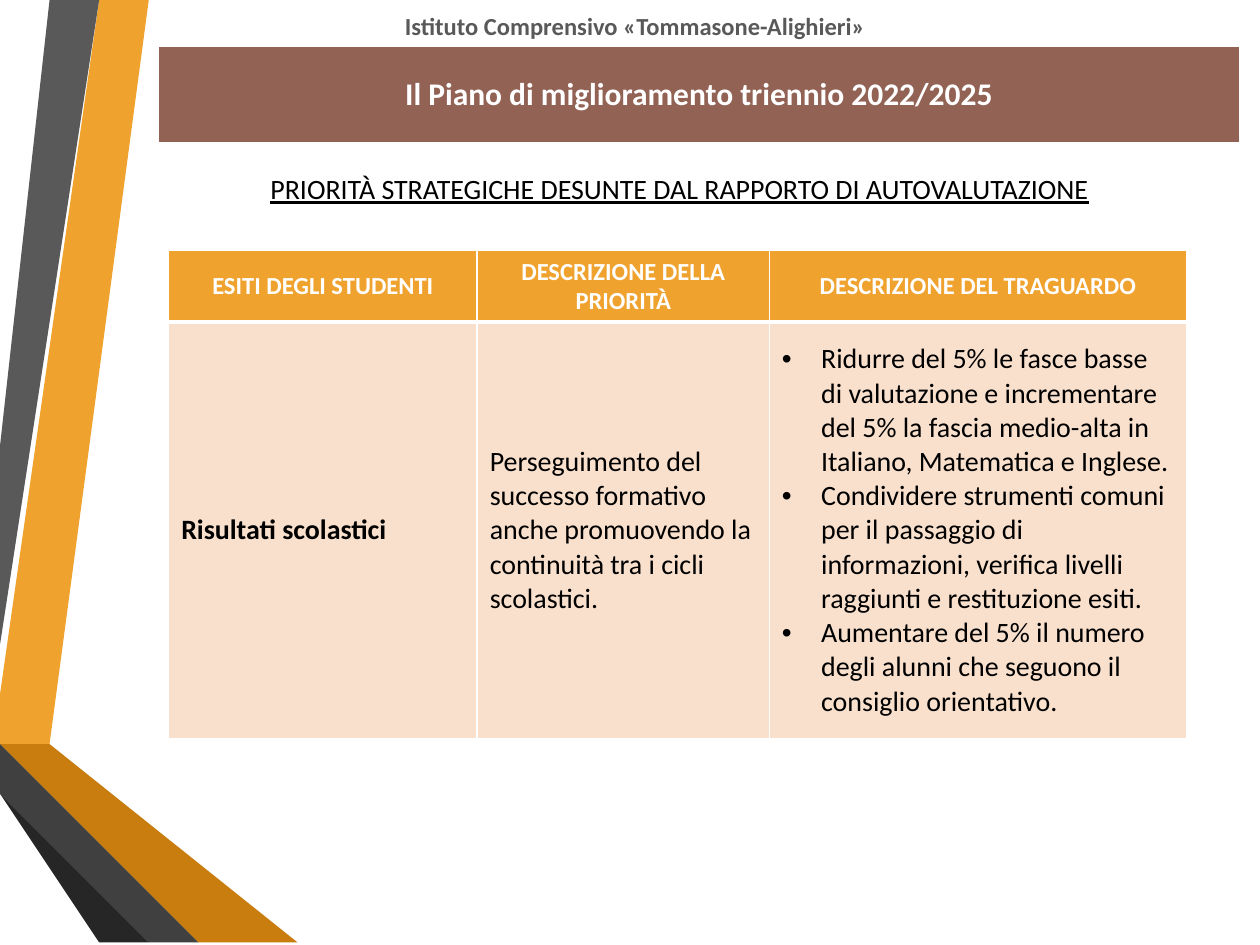
from lxml import etree
from pptx import Presentation
from pptx import util as u
from pptx.dml.color import RGBColor
from pptx.enum import text
from pptx.oxml import ns

COLORS = {
    "orange": "F0A22E", "dark orange": "C87D0E", "brown": "85540A",
    "gray": "595959", "dark gray": "404040", "charcoal": "262626",
    "banner": "926255", "peach": "F9E0CD", "white": "FFFFFF", "black": "000000",
}

# Ribbon colour and corners in centimetres, from back to front
RIBBONS = [
    ("orange", [(0, 13.82), (0, 14.61), (0.56, 14.71), (2.97, 0), (2.26, 0)]),
    ("gray", [(2.11, 0), (1.4, 0), (0, 8.53), (0, 12.85)]),
    ("charcoal", [(0, 15.72), (0, 15.77), (2.36, 19.05), (2.51, 19.05)]),
    ("brown", [(0, 14.71), (0, 14.73), (3.96, 19.05), (4.14, 19.05)]),
    ("dark orange", [(0, 14.71), (4.14, 19.05), (5.92, 19.05), (0.56, 14.71), (0, 14.61)]),
    ("dark gray", [(0, 15.72), (2.51, 19.05), (3.84, 19.05), (0, 14.88)]),
]

HEADERS = ["ESITI DEGLI STUDENTI", "DESCRIZIONE DELLA PRIORITÀ", "DESCRIZIONE DEL TRAGUARDO"]
OUTCOME = "Risultati scolastici"
PRIORITY = ("Perseguimento del successo formativo anche promuovendo la "
            "continuità tra i cicli scolastici.")
TARGETS = [
    "Ridurre del 5% le fasce basse di valutazione e incrementare del 5% "
    "la fascia medio-alta in Italiano, Matematica e Inglese.",
    "Condividere strumenti comuni per il passaggio di informazioni, "
    "verifica livelli raggiunti e restituzione esiti.",
    "Aumentare del 5% il numero degli alunni che seguono il consiglio orientativo.",
]


def rgb(name):
    return RGBColor.from_string(COLORS[name])


def add_ribbon(slide, color, corners):
    builder = slide.shapes.build_freeform(*corners[0], scale=u.Cm(1))
    builder.add_line_segments(corners[1:], close=True)
    shape = builder.convert_to_shape()
    shape.shadow.inherit = False
    shape.fill.solid()
    shape.fill.fore_color.rgb = rgb(color)
    shape.line.fill.background()


def add_bullet(paragraph):
    properties = paragraph._p.get_or_add_pPr()
    properties.set("marL", str(u.Cm(0.79)))
    properties.set("indent", str(-u.Cm(0.79)))
    font = etree.SubElement(properties, ns.qn("a:buFont"))
    font.set("typeface", "Arial")
    etree.SubElement(properties, ns.qn("a:buChar")).set("char", "•")


def write(frame, lines, size, color, bold=False, underline=False, centered=False, bullets=False):
    for index, line in enumerate(lines):
        paragraph = frame.paragraphs[0] if index == 0 else frame.add_paragraph()
        paragraph.text = line
        paragraph.alignment = text.PP_ALIGN.CENTER if centered else text.PP_ALIGN.LEFT
        if bullets:
            add_bullet(paragraph)
        font = paragraph.font
        font.name, font.size = "Calibri", u.Pt(size)
        font.bold, font.underline = bold, underline
        font.color.rgb = rgb(color)


def format_heading(shape, left, top, width, height, line, **style):
    shape.left, shape.top = u.Cm(left), u.Cm(top)
    shape.width, shape.height = u.Cm(width), u.Cm(height)
    frame = shape.text_frame
    frame.word_wrap = True
    frame.auto_size = text.MSO_AUTO_SIZE.SHAPE_TO_FIT_TEXT
    frame.vertical_anchor = text.MSO_ANCHOR.TOP
    write(frame, [line], centered=True, **style)


def add_table(slide, left, top, widths, heights):
    table = slide.shapes.add_table(
        len(heights), len(widths), u.Cm(left), u.Cm(top),
        u.Cm(sum(widths)), u.Cm(sum(heights))).table
    table.first_row = table.horz_banding = False
    for column, width in zip(table.columns, widths):
        column.width = u.Cm(width)
    for row, height in zip(table.rows, heights):
        row.height = u.Cm(height)
    return table


def set_borders(cell, top, bottom):
    """Draw white borders; top and bottom are widths in points, the sides are 1."""
    properties = cell._tc.get_or_add_tcPr()
    for side, width in (("L", 1), ("R", 1), ("T", top), ("B", bottom)):
        line = etree.SubElement(properties, ns.qn(f"a:ln{side}"), w=str(u.Pt(width)))
        fill = etree.SubElement(line, ns.qn("a:solidFill"))
        etree.SubElement(fill, ns.qn("a:srgbClr"), val=COLORS["white"])


def fill_cell(cell, fill, lines, size, color, **style):
    cell.fill.solid()
    cell.fill.fore_color.rgb = rgb(fill)
    cell.vertical_anchor = text.MSO_ANCHOR.MIDDLE
    write(cell.text_frame, lines, size, color, **style)


def add_priorities(slide):
    table = add_table(slide, 3.4, 5.05, [6.22, 5.89, 8.41], [1.42, 8.4])
    for column, header in enumerate(HEADERS):
        cell = table.cell(0, column)
        set_borders(cell, top=1, bottom=3)
        fill_cell(cell, "orange", [header], 14, "white", bold=True, centered=True)
    contents = [([OUTCOME], {"bold": True}), ([PRIORITY], {}), (TARGETS, {"bullets": True})]
    for column, (lines, style) in enumerate(contents):
        cell = table.cell(1, column)
        set_borders(cell, top=3, bottom=1)
        fill_cell(cell, "peach", lines, 16, "black", **style)


def main():
    presentation = Presentation()
    presentation.slide_width, presentation.slide_height = u.Cm(25.4), u.Cm(19.05)
    slide = presentation.slides.add_slide(presentation.slide_layouts.get_by_name("Title Only"))

    for color, corners in RIBBONS:
        add_ribbon(slide, color, corners)
    format_heading(slide.shapes.title, 3.3, 3.33, 20.8, 0.94,
                   "PRIORITÀ STRATEGICHE DESUNTE DAL RAPPORTO DI AUTOVALUTAZIONE",
                   size=16, color="black", underline=True)
    add_priorities(slide)
    institute = slide.shapes.add_textbox(0, 0, 0, 0)
    format_heading(institute, 2.9, 0.1, 19.81, 0.86,
                   "Istituto Comprensivo «Tommasone-Alighieri»",
                   size=14, color="gray", bold=True)
    banner = add_table(slide, 3.2, 0.94, [21.79], [1.93])
    fill_cell(banner.cell(0, 0), "banner", ["Il Piano di miglioramento triennio 2022/2025"],
              18, "white", bold=True, centered=True)
    presentation.save("out.pptx")


if __name__ == "__main__":
    main()
